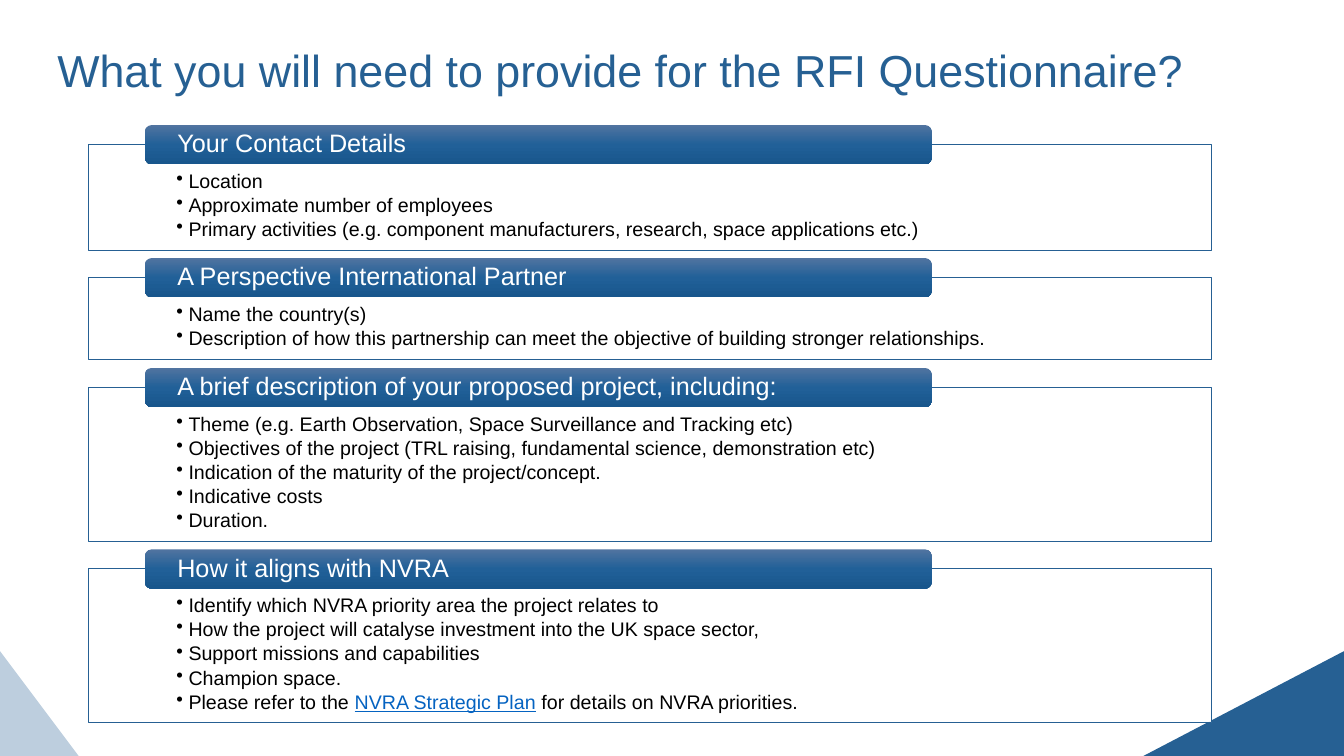
"""Build the slide listing what the RFI questionnaire asks for."""
from lxml import etree
from pptx import Presentation
from pptx.dml.color import RGBColor
from pptx.enum.shapes import MSO_SHAPE
from pptx.enum.text import MSO_ANCHOR, PP_ALIGN
from pptx.oxml import parse_xml
from pptx.oxml.ns import nsdecls, qn
from pptx.util import Pt

RECT, ROUNDED = MSO_SHAPE.RECTANGLE, MSO_SHAPE.ROUNDED_RECTANGLE
TRIANGLE = MSO_SHAPE.ISOSCELES_TRIANGLE
TOP, MIDDLE, LEFT = MSO_ANCHOR.TOP, MSO_ANCHOR.MIDDLE, PP_ALIGN.LEFT
PX = 9144
BLUE, WHITE, BLACK, LINK = "266093", "FFFFFF", "000000", "0563C1"
GRADIENT = [(0, "5174A0"), (50, "216098"), (100, "18568C")]
rgb = RGBColor.from_string

BOX_X, BOX_W, BOX_GAP = 88, 1114, 27
HEADER_X, HEADER_W, HEADER_H, HEADER_RISE = 144, 780, 39, 19
BULLET_INDENT, BULLET_SIZE = 12, 14

SECTIONS = [
    ("Your Contact Details", 105, [
        "Location",
        "Approximate number of employees",
        "Primary activities (e.g. component manufacturers, research, "
        "space applications etc.)"]),
    ("A Perspective International Partner", 82, [
        "Name the country(s)",
        "Description of how this partnership can meet the objective of "
        "building stronger relationships."]),
    ("A brief description of your proposed project, including:", 153, [
        "Theme (e.g. Earth Observation, Space Surveillance and Tracking etc)",
        "Objectives of the project (TRL raising, fundamental science, "
        "demonstration etc)",
        "Indication of the maturity of the project/concept.",
        "Indicative costs",
        "Duration."]),
    ("How it aligns with NVRA", 153, [
        "Identify which NVRA priority area the project relates to",
        "How the project will catalyse investment into the UK space sector,",
        "Support missions and capabilities",
        "Champion space.",
        "Please refer to the |NVRA Strategic Plan| for details on NVRA "
        "priorities."]),
]

prs = Presentation()
prs.slide_width, prs.slide_height = 1333 * PX, 750 * PX
s = prs.slides.add_slide(prs.slide_layouts[6])


def add_block(kind, x, y, w, h, color, opacity):
    """Add a borderless shape with a solid, possibly translucent fill."""
    sp = s.shapes.add_shape(kind, x * PX, y * PX, w * PX, h * PX)
    sp.shadow.inherit = False
    sp.line.fill.background()
    sp.fill.solid()
    sp.fill.fore_color.rgb = rgb(color)
    if opacity < 100:
        clr = sp.fill._xPr.find(".//" + qn("a:srgbClr"))
        etree.SubElement(clr, qn("a:alpha"), val=str(opacity * 1000))
    return sp


def write(sp, lines, size, color, anchor, insets):
    """Write one paragraph per line; a part between bars is a link."""
    tf = sp.text_frame
    left, top, right, bottom = (v * PX for v in insets)
    frame = {"word_wrap": True, "vertical_anchor": anchor,
             "margin_left": left, "margin_top": top,
             "margin_right": right, "margin_bottom": bottom}
    for name, value in frame.items():
        setattr(tf, name, value)
    for i, line in enumerate(lines):
        p = tf.add_paragraph() if i else tf.paragraphs[0]
        p.alignment, p.line_spacing = LEFT, 0.9
        for j, part in enumerate(line.split("|")):
            r = p.add_run()
            r.text = part
            r.font.color.rgb = rgb(LINK if j == 1 else color)
            for name, value in {"name": "Arial", "size": Pt(size),
                                "underline": j == 1}.items():
                setattr(r.font, name, value)
    return tf


for x, w, apex, opacity in [(0, 78, 0, 30), (1134, 199, 1, 100)]:
    sp = add_block(TRIANGLE, x, 646, w, 104, BLUE, opacity)
    sp.adjustments[0] = apex

title = s.shapes.add_textbox(47 * PX, 0, 1239 * PX, 145 * PX)
write(title, ["What you will need to provide for the RFI Questionnaire?"],
      32, BLUE, MIDDLE, (10, 5, 10, 5))

y = 143
for heading, height, bullets in SECTIONS:
    box = add_block(RECT, BOX_X, y, BOX_W, height, WHITE, 90)
    box.line.color.rgb = rgb(BLUE)
    box.line.width = Pt(0.5)
    tf = write(box, bullets, BULLET_SIZE, BLACK, TOP, (87, 27, 86, 11))
    for p in tf.paragraphs:
        p.level, p.space_after = 1, Pt(2.1)
        pPr = p._p.get_or_add_pPr()
        pPr.set("marL", str(BULLET_INDENT * PX))
        pPr.set("indent", str(-BULLET_INDENT * PX))
        etree.SubElement(pPr, qn("a:buChar"), char="•")
        etree.SubElement(p._p, qn("a:endParaRPr"), sz=str(BULLET_SIZE * 100))

    header = add_block(ROUNDED, HEADER_X, y - HEADER_RISE, HEADER_W, HEADER_H,
                       BLUE, 100)
    stops = "".join(f'<a:gs pos="{pos * 1000}"><a:srgbClr val="{c}"/></a:gs>'
                    for pos, c in GRADIENT)
    solid = header.fill._xPr.find(qn("a:solidFill"))
    solid.getparent().replace(solid, parse_xml(
        f'<a:gradFill {nsdecls("a")} rotWithShape="1"><a:gsLst>{stops}'
        '</a:gsLst><a:lin ang="5400000" scaled="0"/></a:gradFill>'))
    write(header, [heading], 18, WHITE, MIDDLE, (30, 0, 30, 0))
    y += height + BOX_GAP

prs.save("out.pptx")
